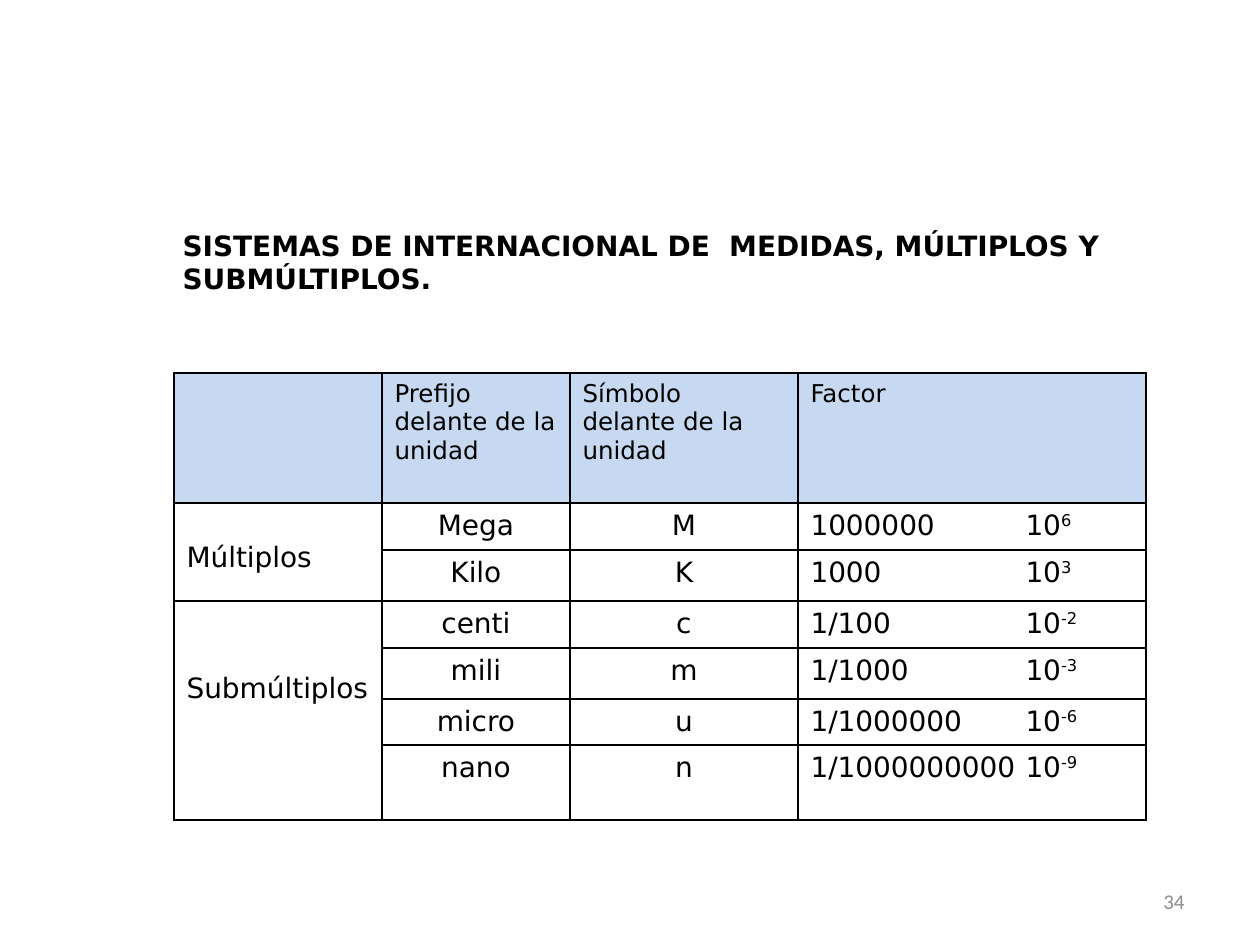
from lxml import etree
from pptx import Presentation
from pptx.dml.color import RGBColor
from pptx.enum.text import MSO_ANCHOR, PP_ALIGN
from pptx.oxml.ns import qn
from pptx.util import Pt

EMU_PER_PX = 914400 // 126
LEFT, CENTER, RIGHT = PP_ALIGN.LEFT, PP_ALIGN.CENTER, PP_ALIGN.RIGHT
TOP, MIDDLE = MSO_ANCHOR.TOP, MSO_ANCHOR.MIDDLE
TITLE_ONLY = 5

COLUMN_WIDTHS = [208, 188, 228, 348]
ROW_HEIGHTS = [130, 47, 51, 47, 51, 46, 75]
HEADINGS = ["", "Prefijo\ndelante de la unidad", "Símbolo\ndelante de la unidad", "Factor"]
# Group, blank lines above its label, and its prefixes
GROUPS = [
    ("Múltiplos", 1, [("Mega", "M", "1000000", "6"), ("Kilo", "K", "1000", "3")]),
    ("Submúltiplos", 2, [("centi", "c", "1/100", "-2"), ("mili", "m", "1/1000", "-3"),
                         ("micro", "u", "1/1000000", "-6"),
                         ("nano", "n", "1/1000000000", "-9")]),
]
LINE_HEIGHT = 33
CELL_MARGIN = 6
POWER_TAB = 215


def px(length):
    return length * EMU_PER_PX


def color(hex_value):
    return RGBColor.from_string(hex_value)


class UnitsSlide:
    FONT, NUMBER_FONT = "DejaVu Sans", "Calibri"
    INK, GRAY, HEADER = "000000", "8C8C8C", "C6D9F1"

    def __init__(self, presentation):
        self.slide = presentation.slides.add_slide(presentation.slide_layouts[TITLE_ONLY])

    def set_text(self, frame, text, size, align=LEFT, bold=False, font=FONT, ink=INK):
        frame.text = text
        for paragraph in frame.paragraphs:
            paragraph.alignment = align
            for run in paragraph.runs:
                run.font.size, run.font.bold, run.font.name = Pt(size), bold, font
                run.font.color.rgb = color(ink)

    def title(self, box, text):
        title = self.slide.shapes.title
        title.left, title.top, title.width, title.height = map(px, box)
        self.set_text(title.text_frame, text, 16, bold=True)
        title.text_frame.vertical_anchor = TOP

    def page_number(self, box, text):
        frame = self.slide.shapes.add_textbox(*map(px, box)).text_frame
        frame.word_wrap = True
        frame.vertical_anchor = MIDDLE
        self.set_text(frame, text, 12, RIGHT, font=self.NUMBER_FONT, ink=self.GRAY)

    def table(self, left, top, widths, heights):
        table = self.slide.shapes.add_table(
            len(heights), len(widths), px(left), px(top),
            px(sum(widths)), px(sum(heights))).table
        for column, width in zip(table.columns, widths):
            column.width = px(width)
        for row, height in zip(table.rows, heights):
            row.height = px(height)
        for cell in table.iter_cells():
            self.border(cell)
            cell.fill.background()
        return table

    def border(self, cell):
        properties = cell._tc.get_or_add_tcPr()
        for side in ("lnL", "lnR", "lnT", "lnB"):
            line = etree.SubElement(properties, qn(f"a:{side}"), w=str(Pt(1)))
            fill = etree.SubElement(line, qn("a:solidFill"))
            etree.SubElement(fill, qn("a:srgbClr"), val=self.INK)

    def heading(self, cell, text):
        cell.fill.solid()
        cell.fill.fore_color.rgb = color(self.HEADER)
        self.set_text(cell.text_frame, text, 14)

    def group(self, first, last, text, lines_above):
        first.merge(last)
        first.margin_top = px(CELL_MARGIN + lines_above * LINE_HEIGHT)
        self.set_text(first.text_frame, text, 16)

    def factor(self, cell, number, exponent):
        paragraph = cell.text_frame.paragraphs[0]
        tabs = etree.SubElement(paragraph._p.get_or_add_pPr(), qn("a:tabLst"))
        etree.SubElement(tabs, qn("a:tab"), pos=str(px(POWER_TAB)), algn="l")
        paragraph.add_run().text = f"{number}\t10"
        power = paragraph.add_run()
        power.text = exponent
        for run in paragraph.runs:
            run.font.size, run.font.name = Pt(16), self.FONT
            run.font.color.rgb = color(self.INK)
        power.font._element.set("baseline", "30000")


def main():
    presentation = Presentation()
    presentation.slide_width, presentation.slide_height = px(1260), px(945)
    page = UnitsSlide(presentation)

    # Title and page number
    page.title((170, 222, 983, 82),
               "SISTEMAS DE INTERNACIONAL DE  MEDIDAS, MÚLTIPLOS Y SUBMÚLTIPLOS.")
    page.page_number((903, 876, 294, 50), "34")

    # Table headings
    units = page.table(174, 373, COLUMN_WIDTHS, ROW_HEIGHTS)
    for column, heading in enumerate(HEADINGS):
        page.heading(units.cell(0, column), heading)

    # Prefixes, group by group
    row = 1
    for group, lines_above, prefixes in GROUPS:
        page.group(units.cell(row, 0), units.cell(row + len(prefixes) - 1, 0),
                   group, lines_above)
        for prefix, symbol, number, exponent in prefixes:
            page.set_text(units.cell(row, 1).text_frame, prefix, 16, CENTER)
            page.set_text(units.cell(row, 2).text_frame, symbol, 16, CENTER)
            page.factor(units.cell(row, 3), number, exponent)
            row += 1

    presentation.save("out.pptx")


if __name__ == "__main__":
    main()
